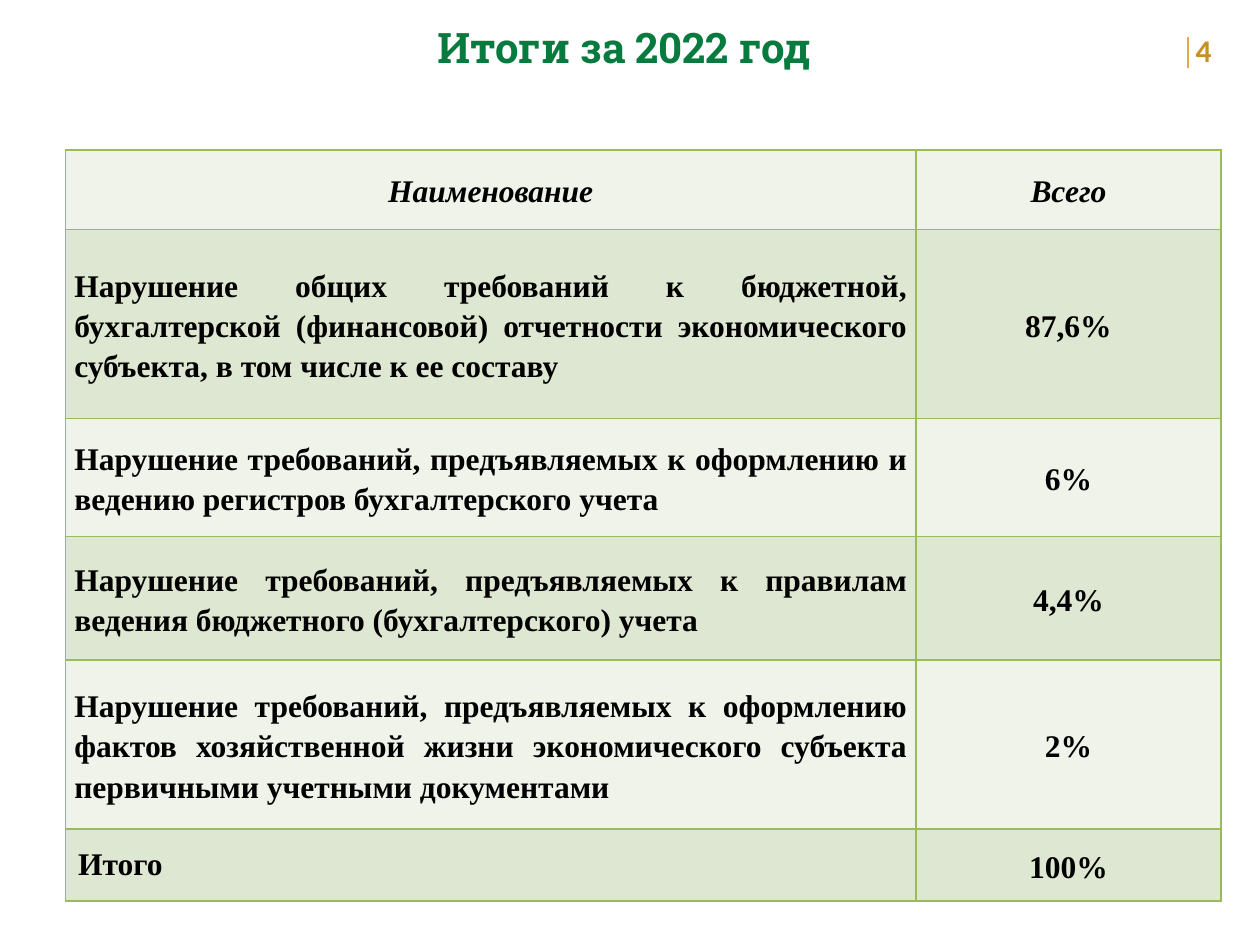
from dataclasses import dataclass

from lxml import etree
from pptx import Presentation
from pptx import util as u
from pptx.dml.color import RGBColor
from pptx.enum import shapes, text
from pptx.oxml.ns import qn

GREEN = RGBColor(0x07, 0x7A, 0x3E)
GOLD = RGBColor(0xC7, 0x90, 0x23)
GOLD_LINE = RGBColor(0xDE, 0xAA, 0x46)
BLACK = RGBColor(0, 0, 0)
BORDER = RGBColor(0x9B, 0xBB, 0x59)
BANDS = (RGBColor(0xEF, 0xF3, 0xEA), RGBColor(0xDE, 0xE7, 0xD1))

LEFT, CENTER, JUSTIFY = text.PP_ALIGN.LEFT, text.PP_ALIGN.CENTER, text.PP_ALIGN.JUSTIFY


@dataclass
class Row:
    name: str
    total: str
    height: float
    align: text.PP_ALIGN = JUSTIFY
    italic: bool = False
    space_after: int = 10
    plain_name: bool = False  # default margins and single line spacing


ROWS = [
    Row("Наименование", "Всего", 0.63, CENTER, italic=True, space_after=0),
    Row("Нарушение общих требований к бюджетной, бухгалтерской (финансовой) "
        "отчетности экономического субъекта, в том числе к ее составу", "87,6%", 1.5),
    Row("Нарушение требований, предъявляемых к оформлению и ведению регистров "
        "бухгалтерского учета ", "6%", 0.94),
    Row("Нарушение требований, предъявляемых к правилам ведения бюджетного "
        "(бухгалтерского) учета", "4,4%", 0.98),
    Row("Нарушение требований, предъявляемых к оформлению фактов хозяйственной "
        "жизни экономического субъекта первичными учетными документами", "2%", 1.34),
    Row("Итого", "100%", 0.57, LEFT, space_after=0, plain_name=True),
]
COLUMNS = (6.75, 2.42)


def add_run(p, content: str, size: int, font: str, color: RGBColor, italic: bool = False):
    r = p.add_run()
    r.text = content
    r.font.size = u.Pt(size)
    r.font.name = font
    r.font.bold = True
    r.font.italic = italic
    r.font.color.rgb = color


def add_label(s, box: tuple, content: str, size: int, font: str, color: RGBColor,
              align: text.PP_ALIGN):
    tf = s.shapes.add_textbox(*map(u.Inches, box)).text_frame
    tf.word_wrap = True
    p = tf.paragraphs[0]
    p.alignment = align
    add_run(p, content, size, font, color)


def add_borders(cell):
    tc_pr = cell._tc.get_or_add_tcPr()
    for i, side in enumerate(("lnL", "lnR", "lnT", "lnB")):
        ln = etree.Element(qn(f"a:{side}"), w=str(u.Pt(1)))
        fill = etree.SubElement(ln, qn("a:solidFill"))
        etree.SubElement(fill, qn("a:srgbClr"), val=str(BORDER))
        tc_pr.insert(i, ln)  # borders come before the fill


def fill_cell(cell, content: str, row: Row, align: text.PP_ALIGN, band: RGBColor,
              plain: bool = False, space_after: int = 0):
    cell.fill.solid()
    cell.fill.fore_color.rgb = band
    add_borders(cell)
    cell.vertical_anchor = text.MSO_ANCHOR.MIDDLE
    p = cell.text_frame.paragraphs[0]
    p.alignment = align
    if not plain:
        cell.margin_left = cell.margin_right = u.Inches(0.07)
        cell.margin_top = cell.margin_bottom = 0
        p.line_spacing = 1.15
        p.space_after = u.Pt(space_after)
    add_run(p, content, 18, "Times New Roman", BLACK, row.italic)


def add_results(s):
    heights = [row.height for row in ROWS]
    box = (0.52, 1.19, sum(COLUMNS), sum(heights))
    table = s.shapes.add_table(len(ROWS), len(COLUMNS), *map(u.Inches, box)).table
    table.first_row = table.horz_banding = False
    for column, width in zip(table.columns, COLUMNS):
        column.width = u.Inches(width)
    for i, row in enumerate(ROWS):
        table.rows[i].height = u.Inches(row.height)
        band = BANDS[i % 2]
        fill_cell(table.cell(i, 0), row.name, row, row.align, band, row.plain_name)
        fill_cell(table.cell(i, 1), row.total, row, CENTER, band,
                  space_after=row.space_after)


def add_divider(s):
    line = s.shapes.add_connector(shapes.MSO_CONNECTOR.STRAIGHT,
                                  *map(u.Inches, (9.43, 0.29, 9.43, 0.54)))
    line.line.color.rgb = GOLD_LINE
    line.line.width = u.Pt(1)
    etree.SubElement(line._element.spPr, qn("a:effectLst"))


def main():
    prs = Presentation()
    prs.slide_width, prs.slide_height = u.Inches(10), u.Inches(7.5)
    s = prs.slides.add_slide(prs.slide_layouts[6])

    # Page number
    add_label(s, (9.39, 0.2, 0.61, 0.4), "4", 18, "Calibri", GOLD, LEFT)
    add_divider(s)

    # Results table
    add_results(s)

    # Title
    add_label(s, (0.85, 0.12, 8.21, 0.5), "Итоги за 2022 год", 24, "Roboto Slab",
              GREEN, CENTER)

    prs.save("out.pptx")


if __name__ == "__main__":
    main()
